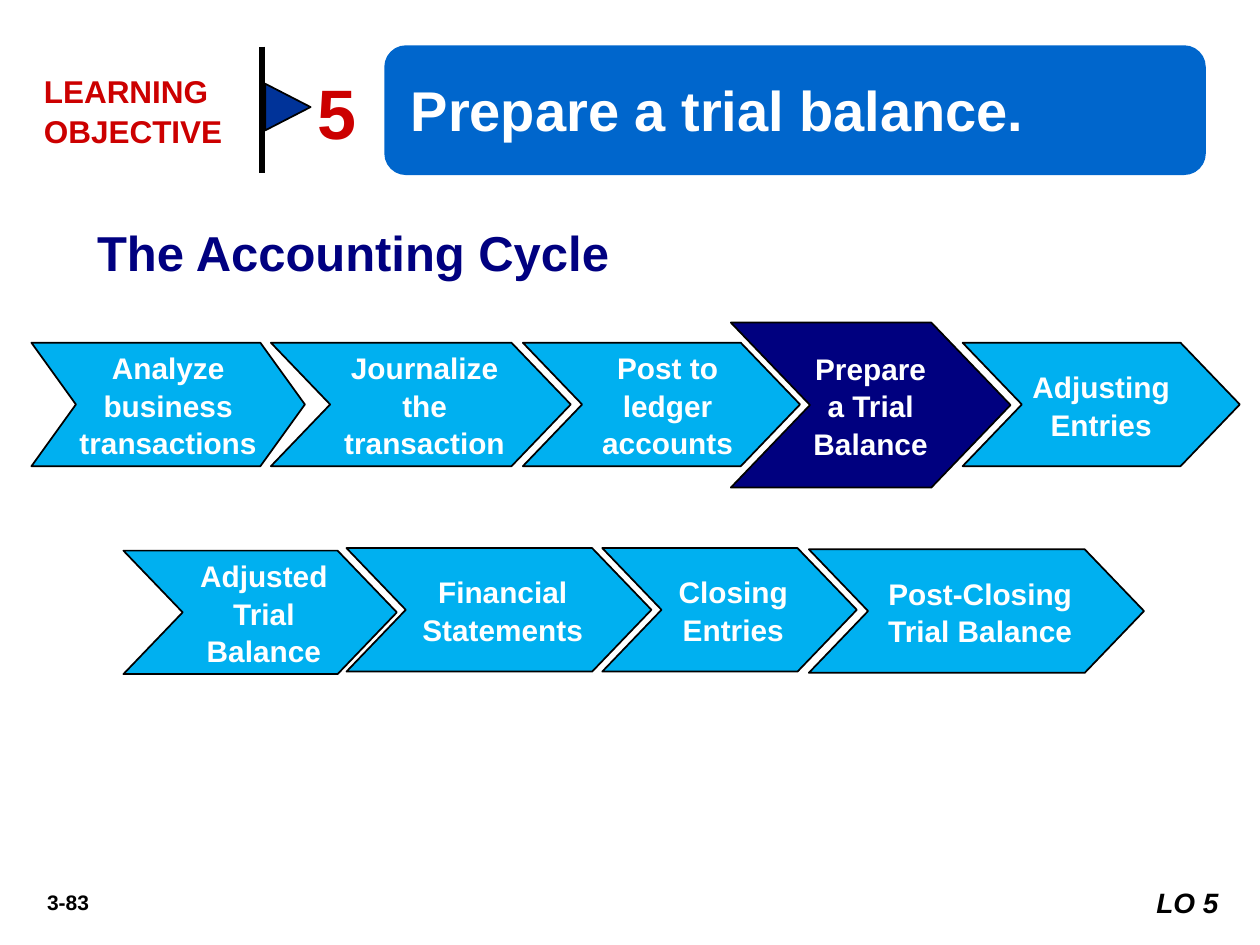
from pptx import Presentation
from pptx.dml.color import RGBColor
from pptx.enum.shapes import MSO_CONNECTOR, MSO_SHAPE
from pptx.enum.text import MSO_ANCHOR, MSO_AUTO_SIZE, PP_ALIGN
from pptx.oxml.ns import qn
from pptx.util import Inches, Pt
from lxml.etree import SubElement

COLORS = {
    "black": "000000", "white": "FFFFFF", "red": "CC0000", "navy": "000080",
    "dark": "00007F", "flag": "003399", "banner": "0066CC", "sky": "00B0F0",
}
LEFT, MID, RIGHT = PP_ALIGN.LEFT, PP_ALIGN.CENTER, PP_ALIGN.RIGHT
ROUND, ARROW = MSO_SHAPE.ROUNDED_RECTANGLE, MSO_SHAPE.CHEVRON
STEPS = [
    ("Analyze business transactions", 0.25, 2.72, 2.17, 0),
    ("Post to ledger accounts", 4.15, 2.72, 2.2, 0.1),
    ("Journalize the transaction", 2.15, 2.72, 2.38, 0.06),
    ("Prepare a Trial Balance", 5.8, 2.56, 2.22, 0),
    ("Adjusting Entries", 7.64, 2.72, 2.2, 0),
    ("Adjusted Trial Balance", 0.98, 4.37, 2.17, 0.06),
    ("Financial Statements", 2.75, 4.35, 2.42, 0.06),
    ("Closing Entries", 4.78, 4.35, 2.02, 0.06),
    ("Post-Closing Trial Balance", 6.42, 4.36, 2.66, 0.06),
]


class Deck:
    """Holds the style and the current slide, and draws each kind of element."""

    def __init__(self, font):
        self.font = font
        self.prs = Presentation()
        self.prs.slide_width, self.prs.slide_height = Inches(10), Inches(7.5)
        self.slide = self.prs.slides.add_slide(self.prs.slide_layouts[5])

    def color(self, name):
        return RGBColor.from_string(COLORS[name])

    def text(self, shape, words, size, color, align=LEFT, anchor=MSO_ANCHOR.TOP,
             pad=(0.1, 0.05, 0.1, 0.05), italic=False):
        frame = shape.text_frame
        frame.text = words
        frame.word_wrap = True
        frame.auto_size = MSO_AUTO_SIZE.NONE
        frame.vertical_anchor = anchor
        (frame.margin_left, frame.margin_top,
         frame.margin_right, frame.margin_bottom) = map(Inches, pad)
        para = frame.paragraphs[0]
        para.alignment, para.line_spacing = align, 1.05
        font = para.font
        font.name, font.size, font.bold, font.italic = self.font, Pt(size), True, italic
        font.color.rgb = self.color(color)

    def title(self, words, box, size, color):
        shape = self.slide.shapes.title
        shape.left, shape.top, shape.width, shape.height = map(Inches, box)
        self.text(shape, words, size, color)

    def label(self, words, box, size, color, **style):
        self.text(self.slide.shapes.add_textbox(*map(Inches, box)), words, size, color, **style)

    def shape(self, kind, box, fill, line=None):
        shape = self.slide.shapes.add_shape(kind, *map(Inches, box))
        shape.shadow.inherit = False
        shape.fill.solid()
        shape.fill.fore_color.rgb = self.color(fill)
        if line:
            shape.line.color.rgb = self.color(line)
            shape.line.width = Pt(1)
        else:
            shape.line.fill.background()
        return shape

    def rule(self, ends, width, color):
        line = self.slide.shapes.add_connector(MSO_CONNECTOR.STRAIGHT, *map(Inches, ends))
        line.line.color.rgb = self.color(color)
        line.line.width = Pt(width)
        SubElement(line._element.spPr, qn("a:effectLst"))

    def step(self, words, left, top, width, pad, now=False, notch=0.48):
        box = (left, top, width, 1.31 if now else 0.98)
        arrow = self.shape(ARROW, box, "dark" if now else "sky", "black")
        arrow.adjustments[0] = notch
        self.text(arrow, words, 17, "white", MID, MSO_ANCHOR.MIDDLE, (pad, 0.05, 0, 0.05))


def main():
    deck = Deck("Arial")
    deck.title("The Accounting Cycle", (0.67, 1.69, 8.75, 0.57), 28, "navy")
    deck.label("3-83", (0.08, 7, 0.92, 0.3), 12, "black", align=MID)
    flag = deck.shape(MSO_SHAPE.ISOSCELES_TRIANGLE, (2.1, 0.67, 0.37, 0.36), "flag", "black")
    flag.rotation = 90
    deck.label("LEARNING OBJECTIVE", (0.25, 0.51, 1.9, 0.71), 18, "red")
    banner = deck.shape(ROUND, (3.05, 0.36, 6.52, 1.03), "banner")
    deck.text(banner, "Prepare a trial balance.", 32, "white",
              anchor=MSO_ANCHOR.MIDDLE, pad=(0.16, 0.05, 0.1, 0.1))
    deck.label("5", (2.37, 0.47, 0.61, 0.77), 40, "red", align=MID)
    deck.rule((2.08, 0.37, 2.08, 1.37), 3, "black")
    deck.label("LO 5", (9, 6.97, 0.83, 0.37), 16, "black", align=RIGHT,
               pad=(0.1, 0.05, 0.16, 0.05), italic=True)
    for i, step in enumerate(STEPS):
        deck.step(*step, now=i == 3, notch=0.48 if i else 0.36)
    deck.prs.save("out.pptx")


if __name__ == "__main__":
    main()
